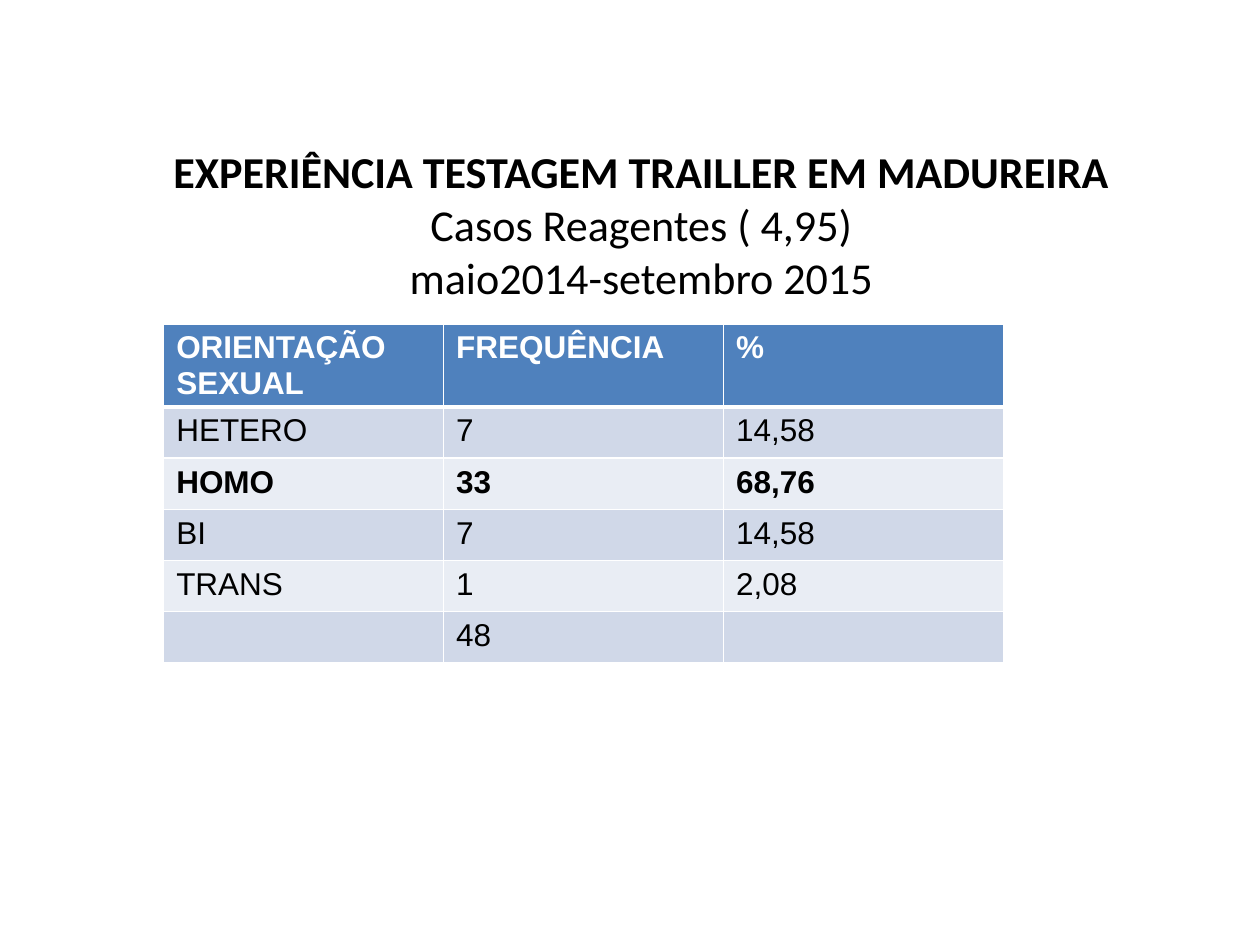
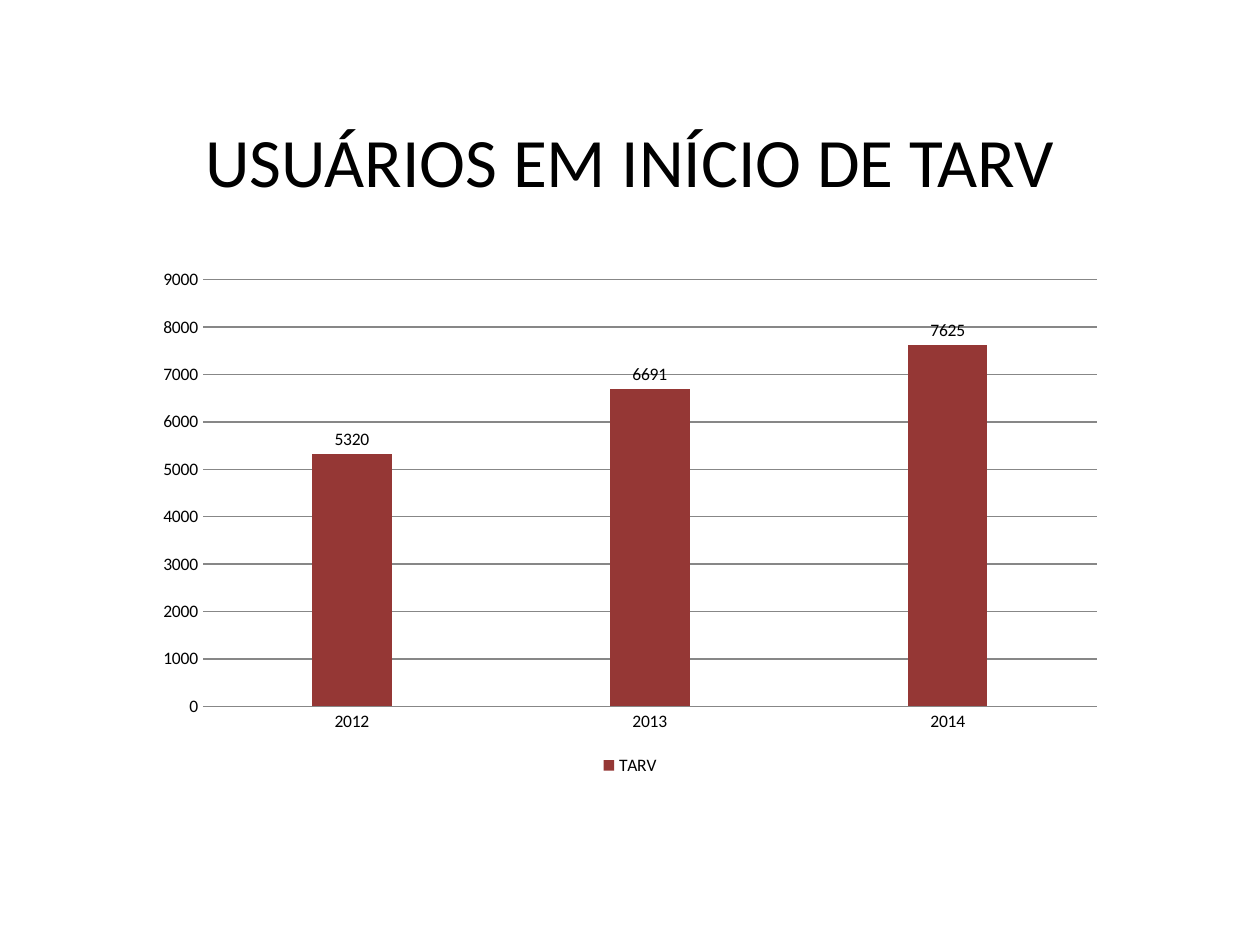
from lxml.etree import SubElement
from pptx import Presentation
from pptx.chart.data import CategoryChartData
from pptx.dml.color import RGBColor
from pptx.enum.chart import XL_CHART_TYPE, XL_LABEL_POSITION, XL_LEGEND_POSITION, XL_TICK_MARK
from pptx.enum.text import MSO_ANCHOR, MSO_AUTO_SIZE, PP_ALIGN
from pptx.oxml.ns import qn
from pptx.util import Cm, Pt


def color(hex_string):
    return RGBColor.from_string(hex_string)


class Deck:
    BLACK = "000000"
    WHITE = "FFFFFF"
    HEADER = "4F81BD"
    BANDS = ("D0D8E8", "E9EDF4")
    BAR = "953735"
    GRID = "878787"
    TITLE_FONT = "Calibri"
    TABLE_FONT = "Arial"

    def __init__(self):
        self.presentation = Presentation()
        self.presentation.slide_width = Cm(25.4)
        self.presentation.slide_height = Cm(19.05)
        self.slide = None

    def add_slide(self):
        layout = self.presentation.slide_layouts.get_by_name("Title Only")
        self.slide = self.presentation.slides.add_slide(layout)
        self.slide.background.fill.solid()
        self.slide.background.fill.fore_color.rgb = color(self.WHITE)

    def style_font(self, font, name, size, hex_string, bold=False):
        font.name = name
        font.size = Pt(size)
        font.bold = bold
        font.color.rgb = color(hex_string)

    def title(self, box, lines, size, anchor=MSO_ANCHOR.MIDDLE):
        shape = self.slide.shapes.title
        shape.left, shape.top, shape.width, shape.height = map(Cm, box)
        frame = shape.text_frame
        frame.word_wrap = True
        frame.auto_size = MSO_AUTO_SIZE.NONE
        frame.vertical_anchor = anchor
        paragraph = frame.paragraphs[0]
        paragraph.alignment = PP_ALIGN.CENTER
        for index, (text, bold) in enumerate(lines):
            if index:
                paragraph.add_line_break()
            run = paragraph.add_run()
            run.text = text
            self.style_font(run.font, self.TITLE_FONT, size, self.BLACK, bold)

    def cell_borders(self, cell, widths):
        properties = cell._tc.get_or_add_tcPr()
        for side, width in widths.items():
            line = SubElement(properties, qn(f"a:ln{side}"), w=str(Pt(width)))
            fill = SubElement(line, qn("a:solidFill"))
            SubElement(fill, qn("a:srgbClr"), val=self.WHITE)

    def table(self, box, rows, bold_rows):
        left, top, width, height = map(Cm, box)
        frame = self.slide.shapes.add_table(len(rows), len(rows[0]), left, top, width, height)
        table = frame.table
        for row_index, row in enumerate(rows):
            header = row_index == 0
            fill = self.HEADER if header else self.BANDS[(row_index - 1) % 2]
            widths = {"L": 1, "R": 1, "T": 3 if row_index == 1 else 1, "B": 3 if header else 1}
            for column_index, text in enumerate(row):
                cell = table.cell(row_index, column_index)
                self.cell_borders(cell, widths)
                cell.fill.solid()
                cell.fill.fore_color.rgb = color(fill)
                if text:
                    run = cell.text_frame.paragraphs[0].add_run()
                    run.text = text
                    self.style_font(run.font, self.TABLE_FONT, 18,
                                    self.WHITE if header else self.BLACK,
                                    row_index in bold_rows)

    def column_chart(self, box, categories, name, values):
        data = CategoryChartData()
        data.categories = categories
        data.add_series(name, values)
        chart = self.slide.shapes.add_chart(
            XL_CHART_TYPE.COLUMN_CLUSTERED, *map(Cm, box), data).chart
        self.style_font(chart.font, self.TITLE_FONT, 10, self.BLACK)
        chart.has_title = False
        chart.has_legend = True
        chart.legend.position = XL_LEGEND_POSITION.BOTTOM
        chart.legend.include_in_layout = False

        for axis in (chart.category_axis, chart.value_axis):
            axis.major_tick_mark = XL_TICK_MARK.NONE
            axis.minor_tick_mark = XL_TICK_MARK.NONE
        chart.category_axis.format.line.color.rgb = color(self.GRID)
        chart.value_axis.format.line.fill.background()
        chart.value_axis.has_major_gridlines = True
        chart.value_axis.major_gridlines.format.line.color.rgb = color(self.GRID)

        plot = chart.plots[0]
        plot.gap_width = 274
        plot.overlap = -24
        plot.vary_by_categories = False
        series = plot.series[0]
        series.format.fill.solid()
        series.format.fill.fore_color.rgb = color(self.BAR)
        labels = series.data_labels
        labels.show_value = True
        labels.position = XL_LABEL_POSITION.OUTSIDE_END
        self.style_font(labels.font, self.TITLE_FONT, 10, self.BLACK)


def main():
    deck = Deck()

    deck.add_slide()
    deck.title((1.5, 2.92, 22.86, 3.18), [
        ("EXPERIÊNCIA TESTAGEM TRAILLER EM MADUREIRA", True),
        ("Casos Reagentes ( 4,95)", False),
        ("maio2014-setembro 2015", False),
    ], 25.2)
    deck.table((3.3, 6.53, 16.93, 6.18), [
        ("ORIENTAÇÃO SEXUAL", "FREQUÊNCIA", "%"),
        ("HETERO", "7", "14,58"),
        ("HOMO", "33", "68,76"),
        ("BI", "7", "14,58"),
        ("TRANS", "1", "2,08"),
        ("", "48", ""),
    ], bold_rows=(0, 2))

    deck.add_slide()
    deck.title((1.27, 0.76, 22.86, 3.43), [("USUÁRIOS EM INÍCIO DE TARV", False)],
               39.6, MSO_ANCHOR.BOTTOM)
    deck.column_chart((2.9, 5.23, 19.6, 10.5), ("2012", "2013", "2014"),
                      "TARV", (5320, 6691, 7625))

    deck.presentation.save("out.pptx")


if __name__ == "__main__":
    main()
